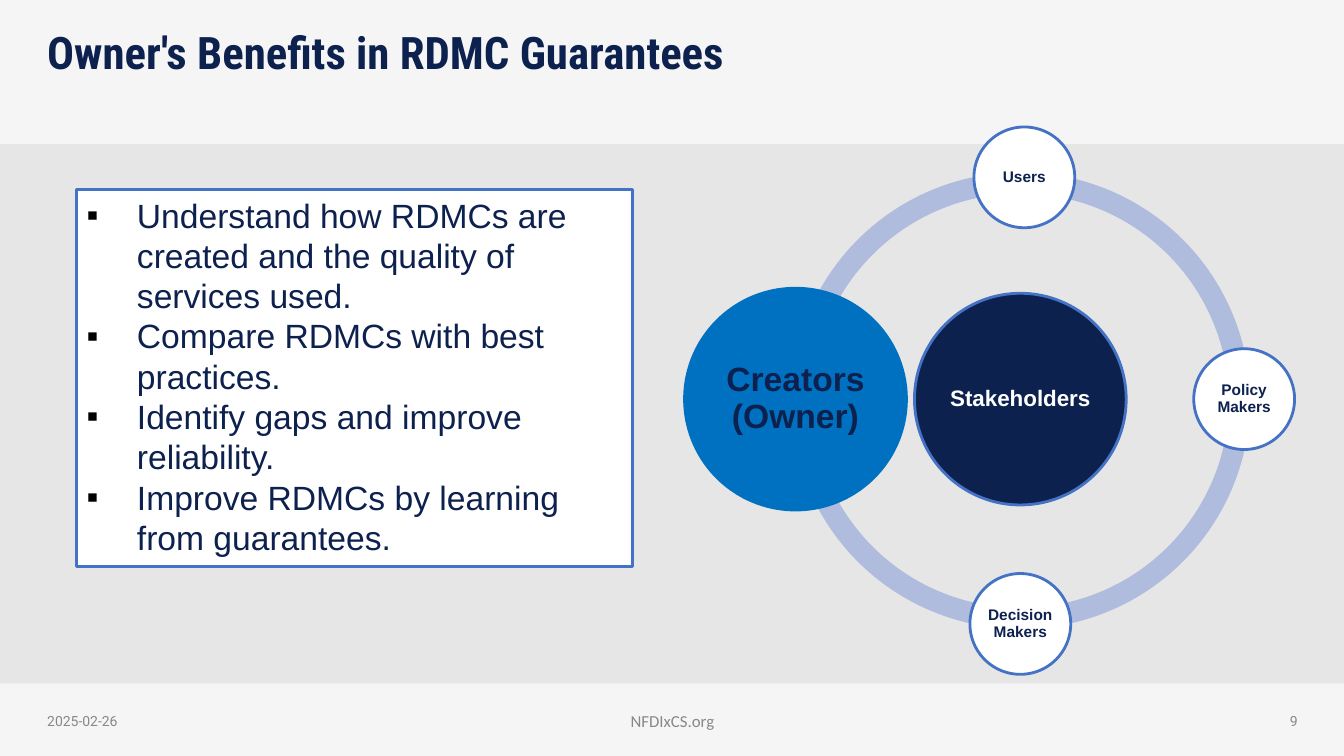
from dataclasses import dataclass
from lxml import etree
from pptx import Presentation
from pptx.dml.color import RGBColor
from pptx.enum.shapes import MSO_SHAPE as SHAPE
from pptx.enum.text import MSO_ANCHOR as ANCHOR, PP_ALIGN as ALIGN
from pptx.oxml.ns import qn
from pptx.util import Inches, Pt


@dataclass(frozen=True)
class Theme:
    back: str = "E7E6E6"
    white: str = "FFFFFF"
    navy: str = "0D214F"
    outline: str = "4472C4"
    owner: str = "0070C0"
    ring: str = "B0BCDE"
    grey: str = "888888"
    body_font: str = "Arial"
    title_font: str = "Roboto Condensed"
    title_size: int = 32
    body_size: int = 24
    hub_size: int = 16
    node_size: int = 11
    foot_size: int = 10
    site_size: int = 12
    line: int = 2


T = Theme()

# Content
TITLE = "Owner's Benefits in RDMC Guarantees"
BENEFITS = [
    "Understand how RDMCs are created and the quality of services used.",
    "Compare RDMCs with best practices.",
    "Identify gaps and improve reliability.",
    "Improve RDMCs by learning from guarantees.",
]
# left, width, text, alignment, font, size
FOOTER = [
    (0.37, 3, "2025-02-26", ALIGN.LEFT, "Roboto", T.foot_size),
    (9.97, 3, "9", ALIGN.RIGHT, "Roboto", T.foot_size),
    (3.74, 5.86, "NFDIxCS.org", ALIGN.CENTER, "Calibri", T.site_size),
]
# start and end in degrees clockwise from the right, top
ARCS = [(180.57, 271.1, 1.71), (90, 180, 1.68), (0, 90, 1.68), (271.09, 359.43, 1.71)]
ARC_LEFT, ARC_SIZE, ARC_THICKNESS = 7.84, 4.56, 0.046
# text, centre x, centre y, diameter, fill, line, text colour, size
CIRCLES = [
    ("Stakeholders", 10.12, 3.96, 2.1, T.navy, T.outline, T.white, T.hub_size),
    ("Users", 10.16, 1.76, 1, T.white, T.outline, T.navy, T.node_size),
    ("Policy Makers", 12.34, 3.96, 1, T.white, T.outline, T.navy, T.node_size),
    ("Decision Makers", 10.12, 6.19, 1, T.white, T.outline, T.navy, T.node_size),
    ("Creators (Owner)", 7.89, 3.96, 2.2, T.owner, T.owner, T.navy, T.body_size),
]

prs = Presentation()
prs.slide_width, prs.slide_height = Inches(13.33), Inches(7.5)
s = prs.slides.add_slide(prs.slide_layouts[6])
s.background.fill.solid()
s.background.fill.fore_color.rgb = RGBColor.from_string(T.back)


def add_shape(kind, box, fill, line=None, alpha=None):
    sp = s.shapes.add_shape(kind, *map(Inches, box))
    sp.shadow.inherit = False
    sp.fill.solid()
    sp.fill.fore_color.rgb = RGBColor.from_string(fill)
    if alpha:
        color = sp.fill._xPr.find(qn("a:solidFill"))[0]
        etree.SubElement(color, qn("a:alpha"), val=str(alpha * 1000))
    if line:
        sp.line.color.rgb = RGBColor.from_string(line)
        sp.line.width = Pt(T.line)
    else:
        sp.line.fill.background()
    return sp


def add_bullet(p):
    pPr = p._p.get_or_add_pPr()
    pPr.set("marL", str(Inches(0.5)))
    pPr.set("indent", str(Inches(-0.5)))
    color = etree.SubElement(pPr, qn("a:buClr"))
    etree.SubElement(color, qn("a:srgbClr"), val="000000")
    etree.SubElement(pPr, qn("a:buFont"), typeface=T.body_font)
    etree.SubElement(pPr, qn("a:buChar"), char="▪")


def write(sp, *lines, size, color=T.navy, font=T.body_font, bold=False, align=ALIGN.LEFT,
          anchor=ANCHOR.TOP, inset=(0.1, 0.05), spacing=None, bullet=False):
    tf = sp.text_frame
    tf.word_wrap = True
    tf.vertical_anchor = anchor
    tf.margin_left = tf.margin_right = Inches(inset[0])
    tf.margin_top = tf.margin_bottom = Inches(inset[1])
    for i, text in enumerate(lines):
        p = tf.add_paragraph() if i else tf.paragraphs[0]
        p.alignment = align
        if spacing:
            p.line_spacing = spacing
        if bullet:
            add_bullet(p)
        r = p.add_run()
        r.text = text
        r.font.name, r.font.size, r.font.bold = font, Pt(size), bold
        r.font.color.rgb = RGBColor.from_string(color)


def add_text(box, *lines, **fmt):
    write(s.shapes.add_textbox(*map(Inches, box)), *lines, **fmt)


# Pale bands at bottom and top
for top, height in ((6.78, 0.72), (0, 1.43)):
    add_shape(SHAPE.RECTANGLE, (0, top, 13.33, height), T.white, alpha=60)

# Title and footer
add_text((0.37, 0.26, 12.6, 1.17), TITLE, size=T.title_size, font=T.title_font,
         bold=True, spacing=0.9)
for left, width, text, align, font, size in FOOTER:
    add_text((left, 6.95, width, 0.4), text, size=size, font=font, color=T.grey,
             align=align, anchor=ANCHOR.MIDDLE)

# Benefits
benefits = add_shape(SHAPE.RECTANGLE, (0.76, 1.88, 5.51, 3.74), T.white, T.outline)
write(benefits, *BENEFITS, size=T.body_size, bullet=True)

# Ring of arcs
for start, end, top in ARCS:
    arc = add_shape(SHAPE.BLOCK_ARC, (ARC_LEFT, top, ARC_SIZE, ARC_SIZE), T.ring)
    # An adjustment of 1 stands for 100000 units, a degree for 60000
    for i, value in enumerate((start * 0.6, end * 0.6, ARC_THICKNESS)):
        arc.adjustments[i] = value

# Stakeholder circles
for text, x, y, d, fill, line, color, size in CIRCLES:
    sp = add_shape(SHAPE.OVAL, (x - d / 2, y - d / 2, d, d), fill, line)
    write(sp, text, size=size, color=color, bold=True, align=ALIGN.CENTER,
          anchor=ANCHOR.MIDDLE, inset=(0.02, 0.02), spacing=0.9)

prs.save("out.pptx")
